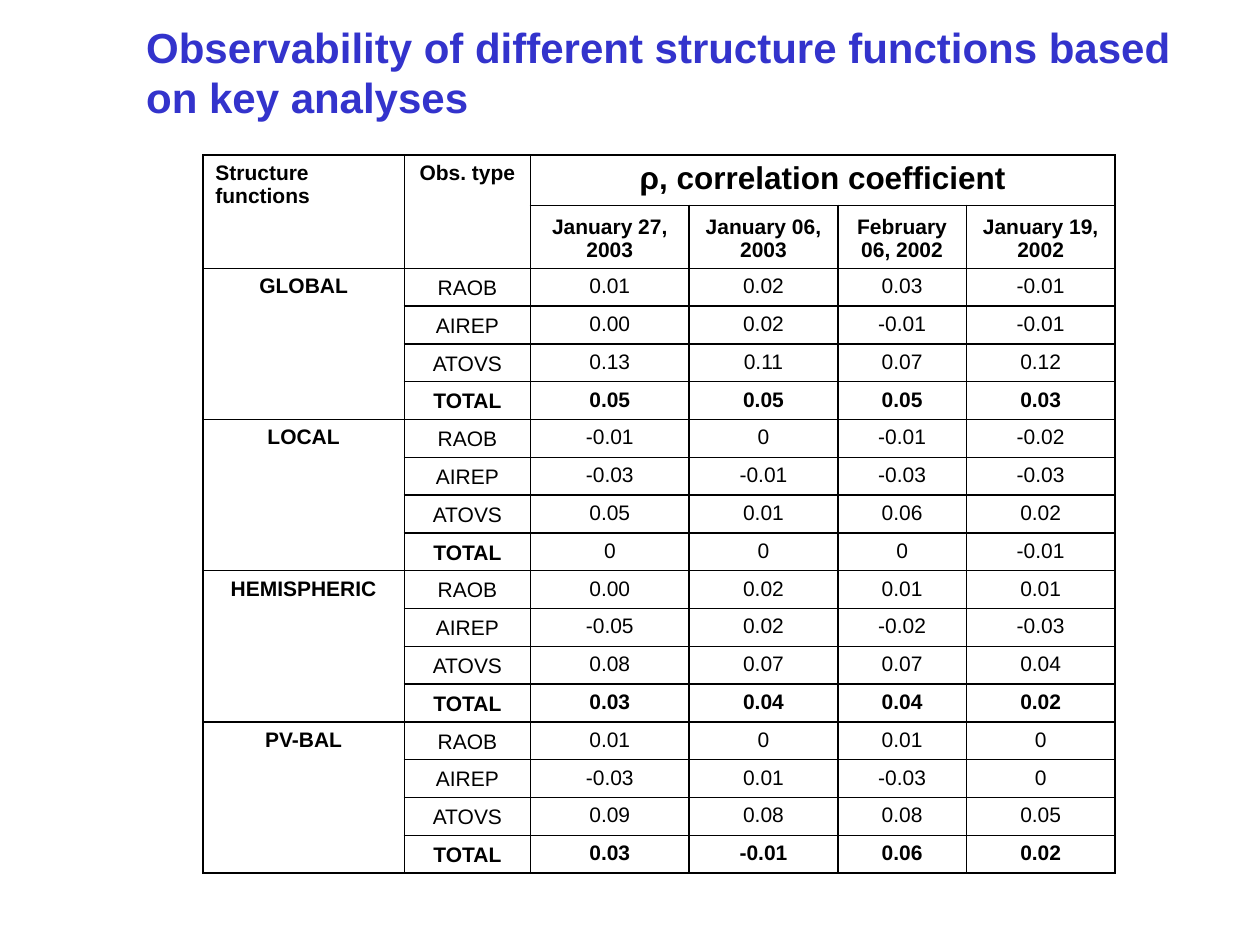
from dataclasses import dataclass

from lxml import etree
from pptx import Presentation
from pptx import util as u
from pptx.dml.color import RGBColor
from pptx.enum import text
from pptx.oxml import ns

WIDTH, HEIGHT = u.Inches(10), u.Inches(7.5)
FONT, BLACK, WHITE, TITLE_BLUE = "Arial", "000000", "FFFFFF", "3333CC"
LEFT, CENTER = text.PP_ALIGN.LEFT, text.PP_ALIGN.CENTER
TOP, MIDDLE, BOTTOM = (text.MSO_ANCHOR.TOP, text.MSO_ANCHOR.MIDDLE,
                       text.MSO_ANCHOR.BOTTOM)

# Positions and sizes as percentages of the slide
TITLE_BOX = (10.6, 3.73, 85, 7.73)
TABLE_LEFT, TABLE_TOP = 16.1, 16.4
COLUMN_SHARES = [16, 10, 12.6, 11.8, 10.2, 11.8]
HEADER_SHARES, BODY_SHARE = [5.33, 6.67], 4

TITLE = "Observability of different structure functions based on key analyses"
DATES = ["January 27,\n2003", "January 06,\n2003",
         "February 06, 2002", "January 19, 2002"]
OBSERVATIONS = ["RAOB", "AIREP", "ATOVS", "TOTAL"]


@dataclass
class StructureFunction:
    name: str
    rows: list[str]
    bold_total: bool = True


@dataclass
class CellStyle:
    bold: bool = False
    size: float = 12
    align: text.PP_ALIGN = CENTER
    anchor: text.MSO_ANCHOR = TOP


FUNCTIONS = [
    StructureFunction("GLOBAL", ["0.01 0.02 0.03 -0.01", "0.00 0.02 -0.01 -0.01",
                                 "0.13 0.11 0.07 0.12", "0.05 0.05 0.05 0.03"]),
    StructureFunction("LOCAL", ["-0.01 0 -0.01 -0.02", "-0.03 -0.01 -0.03 -0.03",
                                "0.05 0.01 0.06 0.02", "0 0 0 -0.01"], False),
    StructureFunction("HEMISPHERIC", ["0.00 0.02 0.01 0.01", "-0.05 0.02 -0.02 -0.03",
                                      "0.08 0.07 0.07 0.04", "0.03 0.04 0.04 0.02"]),
    StructureFunction("PV-BAL", ["0.01 0 0.01 0", "-0.03 0.01 -0.03 0",
                                 "0.09 0.08 0.08 0.05", "0.03 -0.01 0.06 0.02"]),
]


def color(value: str) -> RGBColor:
    return RGBColor.from_string(value)


def across(share: float) -> int:
    return round(WIDTH * share / 100)


def down(share: float) -> int:
    return round(HEIGHT * share / 100)


def format_text(frame, size: float, bold: bool, ink: str, align) -> None:
    for paragraph in frame.paragraphs:
        paragraph.alignment = align
        font = paragraph.runs[0].font
        values = {"name": FONT, "size": u.Pt(size), "bold": bold}
        for name, value in values.items():
            setattr(font, name, value)
        font.color.rgb = color(ink)


def style_box(cell) -> None:
    """Thin black border on every side, then a white fill."""
    properties = cell._tc.get_or_add_tcPr()
    for side in ("a:lnL", "a:lnR", "a:lnT", "a:lnB"):
        line = etree.SubElement(properties, ns.qn(side), w=str(u.Pt(1)))
        fill = etree.SubElement(line, ns.qn("a:solidFill"))
        etree.SubElement(fill, ns.qn("a:srgbClr"), val=BLACK)
    cell.fill.solid()
    cell.fill.fore_color.rgb = color(WHITE)


def write_cell(cell, words: str, style: CellStyle) -> None:
    cell.text = words
    cell.vertical_anchor = style.anchor
    format_text(cell.text_frame, style.size, style.bold, BLACK, style.align)


def add_title(slide) -> None:
    title = slide.shapes.title
    left, top, width, height = TITLE_BOX
    box = {"left": across(left), "top": down(top),
           "width": across(width), "height": down(height)}
    for name, value in box.items():
        setattr(title, name, value)
    frame = title.text_frame
    frame.text = TITLE
    settings = {"word_wrap": True, "vertical_anchor": MIDDLE,
                "auto_size": text.MSO_AUTO_SIZE.NONE}
    for name, value in settings.items():
        setattr(frame, name, value)
    format_text(frame, 24, True, TITLE_BLUE, LEFT)


def add_grid(slide):
    row_shares = HEADER_SHARES + [BODY_SHARE] * (len(FUNCTIONS) * len(OBSERVATIONS))
    table = slide.shapes.add_table(
        len(row_shares), len(COLUMN_SHARES), across(TABLE_LEFT), down(TABLE_TOP),
        across(sum(COLUMN_SHARES)), down(sum(row_shares))).table
    table.first_row = table.horz_banding = False
    for column, share in zip(table.columns, COLUMN_SHARES):
        column.width = across(share)
    for row, share in zip(table.rows, row_shares):
        row.height = down(share)
    for cell in table.iter_cells():
        style_box(cell)
    return table


def fill_header(table) -> None:
    for first, last in [((0, 0), (1, 0)), ((0, 1), (1, 1)), ((0, 2), (0, 5))]:
        table.cell(*first).merge(table.cell(*last))
    write_cell(table.cell(0, 0), "Structure\nfunctions", CellStyle(True, align=LEFT))
    write_cell(table.cell(0, 1), "Obs. type", CellStyle(True))
    write_cell(table.cell(0, 2), "ρ, correlation coefficient", CellStyle(True, 18))
    for column, date in enumerate(DATES, 2):
        write_cell(table.cell(1, column), date, CellStyle(True, anchor=BOTTOM))


def fill_function(table, first_row: int, function: StructureFunction) -> None:
    last_row = first_row + len(OBSERVATIONS) - 1
    name_cell = table.cell(first_row, 0)
    name_cell.merge(table.cell(last_row, 0))
    write_cell(name_cell, function.name, CellStyle(True))
    for row, (observation, values) in enumerate(
            zip(OBSERVATIONS, function.rows), first_row):
        total = row == last_row
        write_cell(table.cell(row, 1), observation, CellStyle(total, anchor=BOTTOM))
        for column, value in enumerate(values.split(), 2):
            write_cell(table.cell(row, column), value,
                       CellStyle(total and function.bold_total))


def main() -> None:
    presentation = Presentation()
    presentation.slide_width, presentation.slide_height = WIDTH, HEIGHT
    slide = presentation.slides.add_slide(presentation.slide_layouts[5])
    add_title(slide)

    # Correlation table: header, then one block per structure function
    table = add_grid(slide)
    fill_header(table)
    for index, function in enumerate(FUNCTIONS):
        fill_function(table, len(HEADER_SHARES) + index * len(OBSERVATIONS), function)

    presentation.save("out.pptx")


if __name__ == "__main__":
    main()
